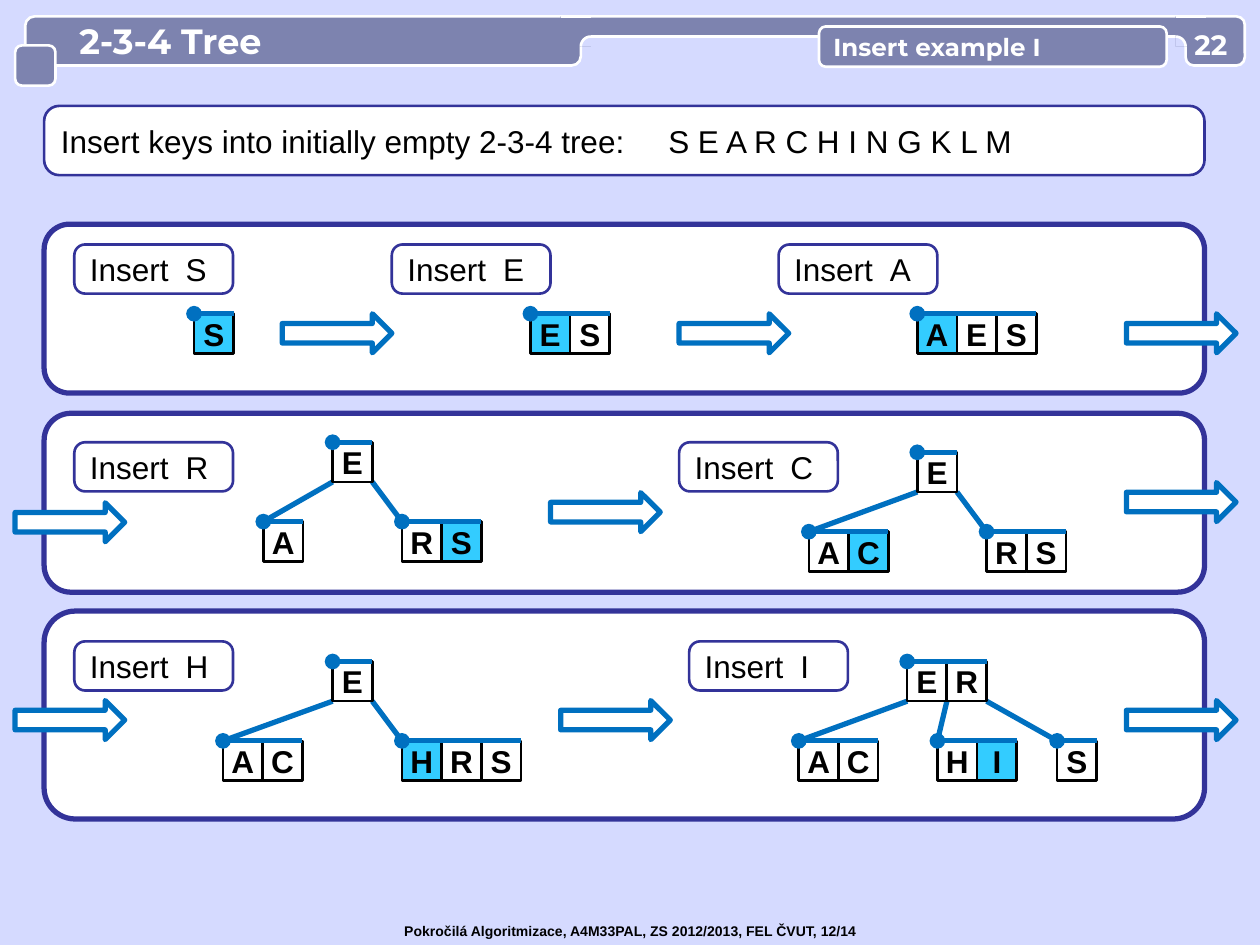
import math
from dataclasses import dataclass

from pptx import Presentation
from pptx.dml.color import RGBColor
from pptx.enum.shapes import MSO_CONNECTOR, MSO_SHAPE
from pptx.enum.text import MSO_ANCHOR, PP_ALIGN
from pptx.oxml.ns import qn
from pptx.util import Inches, Pt
from lxml import etree

ROUNDED = MSO_SHAPE.ROUNDED_RECTANGLE
RECTANGLE = MSO_SHAPE.RECTANGLE
RIGHT_ARROW = MSO_SHAPE.RIGHT_ARROW
STRAIGHT = MSO_CONNECTOR.STRAIGHT
MIDDLE = MSO_ANCHOR.MIDDLE
LEFT, CENTER = PP_ALIGN.LEFT, PP_ALIGN.CENTER

COLORS = {
    "page": "D5DAFF", "header": "7D83AF", "frame": "333399", "link": "0070C0",
    "new": "33CCFF", "white": "FFFFFF", "black": "000000",
}
CELL = 0.63 / 2
LEVEL = 2 * CELL
CORNER = 0.08
COVER = 0.24
HEADER_TOP = 0.13


@dataclass(frozen=True)
class Node:
    keys: str
    left: float
    new: str = ""


@dataclass(frozen=True)
class Step:
    key: str
    label_left: float
    label_top: float
    root: Node
    root_top: float
    children: tuple[Node, ...] = ()


STEPS = [
    Step("S", 0.59, 1.94, Node("S", 1.54, "S"), 2.49),
    Step("E", 3.11, 1.94, Node("ES", 4.21, "E"), 2.49),
    Step("A", 6.18, 1.94, Node("AES", 7.28, "A"), 2.49),
    Step("R", 0.59, 3.51, Node("E", 2.64), 3.51, (Node("A", 2.09), Node("RS", 3.19, "S"))),
    Step("C", 5.39, 3.51, Node("E", 7.28), 3.59, (Node("AC", 6.42, "C"), Node("RS", 7.83))),
    Step("H", 0.59, 5.09, Node("E", 2.64), 5.25, (Node("AC", 1.77), Node("HRS", 3.19, "H"))),
    Step("I", 5.47, 5.09, Node("ER", 7.2), 5.25,
         (Node("AC", 6.34), Node("HI", 7.44, "I"), Node("S", 8.39))),
]
PANELS = [(1.78, 1.34), (3.28, 1.42), (4.85, 1.65)]
ARROWS = [(2.24, 2.49), (5.39, 2.49), (8.94, 2.49), (0.12, 3.99), (4.37, 3.91),
          (8.94, 3.83), (0.12, 5.56), (4.45, 5.56), (8.94, 5.56)]


def rgb(name: str) -> RGBColor:
    return RGBColor.from_string(COLORS[name])


def paint(shape, fill: str | None, line: str | None, weight: float = 1.5) -> None:
    shape.shadow.inherit = False
    if fill:
        shape.fill.solid()
        shape.fill.fore_color.rgb = rgb(fill)
    else:
        shape.fill.background()
    if line:
        shape.line.color.rgb = rgb(line)
        shape.line.width = Pt(weight)
    else:
        shape.line.fill.background()


def add_box(slide, kind, left: float, top: float, width: float, height: float,
            fill: str | None, line: str | None, weight: float = 1.5,
            rounding: float | None = None):
    box = slide.shapes.add_shape(kind, Inches(left), Inches(top), Inches(width), Inches(height))
    if rounding is not None:
        box.adjustments[0] = rounding
    paint(box, fill, line, weight)
    return box


def write(shape, text: str, size: float, color: str = "black", font: str = "Arial",
          bold: bool = False, align=LEFT, wrap: bool = False, side: float = 0.1) -> None:
    frame = shape.text_frame
    frame.word_wrap = wrap
    frame.vertical_anchor = MIDDLE
    frame.margin_left = frame.margin_right = Inches(side)
    paragraph = frame.paragraphs[0]
    paragraph.alignment = align
    run = paragraph.add_run()
    run.text = text
    run.font.size = Pt(size)
    run.font.name = font
    run.font.bold = bold
    run.font.color.rgb = rgb(color)


def add_tab_stop(shape, position: float) -> None:
    properties = shape.text_frame.paragraphs[0]._p.get_or_add_pPr()
    stops = etree.SubElement(properties, qn("a:tabLst"))
    etree.SubElement(stops, qn("a:tab"), pos=str(Inches(position)), algn="l")


def add_line(slide, start: tuple[float, float], end: tuple[float, float],
             color: str = "link", weight: float = 3, dot: bool = False) -> None:
    line = slide.shapes.add_connector(STRAIGHT, *map(Inches, start + end))
    line.line.color.rgb = rgb(color)
    line.line.width = Pt(weight)
    properties = line._element.spPr
    if dot:
        etree.SubElement(properties.find(qn("a:ln")), qn("a:headEnd"), type="oval")
    etree.SubElement(properties, qn("a:effectLst"))


def add_captioned_box(slide, left: float, top: float, width: float, height: float,
                      text: str, tab: float) -> None:
    box = add_box(slide, ROUNDED, left, top, width, height, "white", "frame", rounding=0.22)
    write(box, text, 18, wrap=True)
    add_tab_stop(box, tab)


def add_node(slide, node: Node, top: float) -> None:
    for index, key in enumerate(node.keys):
        fill = "new" if key == node.new else "white"
        cell = add_box(slide, RECTANGLE, node.left + index * CELL, top, CELL, CELL, fill, "black")
        write(cell, key, 18, bold=True, align=CENTER, side=0)
    add_line(slide, (node.left, top), (node.left + len(node.keys) * CELL, top), dot=True)


def add_step(slide, step: Step) -> None:
    add_captioned_box(slide, step.label_left, step.label_top, 1.26, 0.39,
                      f"Insert\t{step.key}", 0.76)
    child_top = step.root_top + LEVEL
    for slot, child in enumerate(step.children):
        add_line(slide, (step.root.left + slot * CELL, step.root_top + CELL),
                 (child.left, child_top))
        add_node(slide, child, child_top)
    add_node(slide, step.root, step.root_top)


def add_corner(slide, cover_left: float, tab_edge: float, side: int) -> None:
    add_box(slide, RECTANGLE, cover_left, HEADER_TOP, COVER, COVER, "header", None)
    add_line(slide, (cover_left, HEADER_TOP), (cover_left + COVER, HEADER_TOP), "white", 1.5)
    center_x, center_y = tab_edge + side * CORNER, 0.29 + CORNER
    angles = [math.radians(90 - 9 * step) for step in range(11)]
    arc = [(Inches(center_x - side * CORNER * math.cos(a)),
            Inches(center_y - CORNER * math.sin(a))) for a in angles]
    center = (Inches(center_x), Inches(center_y))
    for points, closed, fill, line in ((arc + [center], True, "page", None),
                                       (arc, False, None, "white")):
        builder = slide.shapes.build_freeform(*points[0])
        builder.add_line_segments(points[1:], close=closed)
        paint(builder.convert_to_shape(), fill, line)


def add_header(slide) -> None:
    add_box(slide, ROUNDED, 0.2, HEADER_TOP, 4.41, 0.39, "header", "white", rounding=0.19)
    add_box(slide, ROUNDED, 4.61, HEADER_TOP, 4.88, 0.16, "header", "white", rounding=0.5)
    add_corner(slide, 4.45, 4.61, 1)
    add_box(slide, ROUNDED, 0.12, 0.36, 0.32, 0.32, "header", "white", rounding=0.17)
    add_box(slide, ROUNDED, 9.41, HEADER_TOP, 0.47, 0.39, "header", "white", rounding=0.17)
    add_corner(slide, 9.33, 9.41, -1)
    subtitle = add_box(slide, ROUNDED, 6.5, 0.21, 2.76, 0.32, "header", "white", rounding=0.17)
    write(subtitle, "Insert example I", 14, "white", "Montserrat", True)
    number = slide.shapes.add_textbox(Inches(9.41), Inches(0.22), Inches(0.4), Inches(0.27))
    write(number, "22", 16, "white", "Montserrat", True, CENTER, side=0)
    title = slide.shapes.title
    title.left, title.top = Inches(0.53), Inches(HEADER_TOP)
    title.width, title.height = Inches(4), Inches(0.39)
    write(title, "2-3-4 Tree", 20, "white", "Montserrat", True)
    title._element.getparent().append(title._element)


def main() -> None:
    deck = Presentation()
    deck.slide_width, deck.slide_height = Inches(10), Inches(7.5)
    slide = deck.slides.add_slide(deck.slide_layouts[5])
    slide.background.fill.solid()
    slide.background.fill.fore_color.rgb = rgb("page")
    for top, height in PANELS:
        add_box(slide, ROUNDED, 0.35, top, 9.21, height, "white", "frame", 3, 0.15)
    add_captioned_box(slide, 0.35, 0.84, 9.21, 0.55,
                      "Insert keys into initially empty 2-3-4 tree:\tS E A R C H I N G K L M", 4.82)
    for left, top in ARROWS:
        add_box(slide, RIGHT_ARROW, left, top, 0.87, 0.31, "white", "link", 3)
    for step in STEPS:
        add_step(slide, step)
    add_header(slide)
    footer = slide.shapes.add_textbox(Inches(3.11), Inches(7.27), Inches(3.9), Inches(0.24))
    write(footer, "Pokročilá Algoritmizace, A4M33PAL, ZS 2012/2013, FEL ČVUT, 12/14", 8, bold=True)
    deck.save("out.pptx")


if __name__ == "__main__":
    main()
